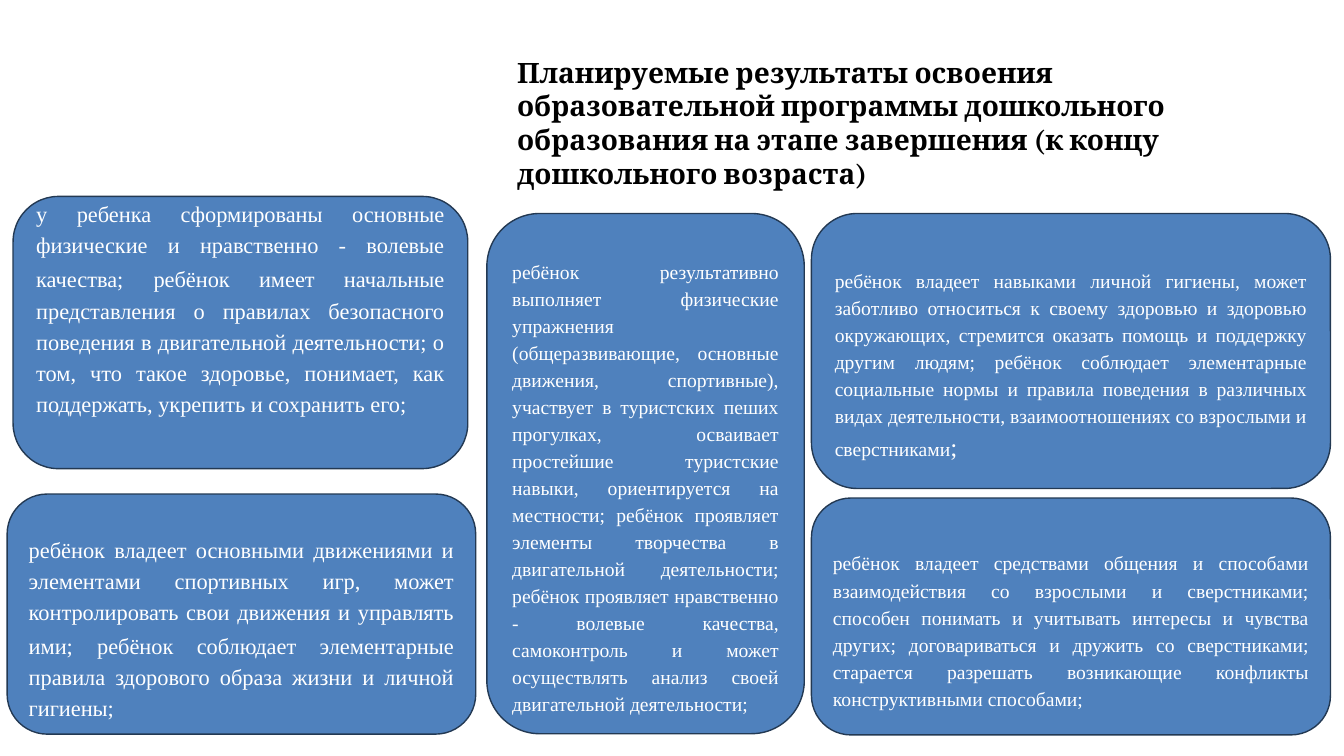
"""Slide with the planned results of a preschool education programme."""
from pptx import Presentation
from pptx.dml.color import RGBColor
from pptx.enum.shapes import MSO_SHAPE
from pptx.enum.text import MSO_ANCHOR, MSO_AUTO_SIZE, PP_ALIGN
from pptx.util import Cm, Pt

COLORS = {"card": "4F81BD", "border": "233953", "title": "000000", "text": "FFFFFF"}


def add_span(para, text, *, size, font="Times New Roman", color="text", bold=False):
    span = para.add_run()
    span.text = text
    span.font.name = font
    span.font.size = Pt(size)
    span.font.bold = bold
    span.font.color.rgb = RGBColor.from_string(COLORS[color])


deck = Presentation()
deck.slide_width, deck.slide_height = Cm(33.87), Cm(19.05)
page = deck.slides.add_slide(deck.slide_layouts[6])

title = page.shapes.add_textbox(Cm(12.78), Cm(1.27), Cm(18.77), Cm(3.68))
title.text_frame.word_wrap = True
title.text_frame.auto_size = MSO_AUTO_SIZE.SHAPE_TO_FIT_TEXT
add_span(
    title.text_frame.paragraphs[0],
    "Планируемые результаты освоения образовательной программы дошкольного "
    "образования на этапе завершения (к концу дошкольного возраста)",
    size=20, font="Cambria", color="title", bold=True,
)

MIDDLE_LEFT, RIGHT_LEFT, RIGHT_WIDTH, UPPER_TOP = 12.27, 20.45, 13.08, 5.38
INSET, LOWERED, RAISED = 0.13, 0.76, 1.44

cards = [
    ((0.33, 4.95, 11.46, 6.86), (INSET, RAISED), [
        ("у ребенка сформированы основные физические и нравственно - волевые качества;", 16),
        (" ", 18),
        ("ребёнок имеет начальные представления о правилах безопасного поведения в "
         "двигательной деятельности; о том, что такое здоровье, понимает, как поддержать, "
         "укрепить и сохранить его;", 16),
    ]),
    ((MIDDLE_LEFT, UPPER_TOP, 8, 13.11), (LOWERED, INSET), [
        ("ребёнок результативно выполняет физические упражнения (общеразвивающие, основные "
         "движения, спортивные), участвует в туристских пеших прогулках, осваивает простейшие "
         "туристские навыки, ориентируется на местности; ребёнок проявляет элементы творчества "
         "в двигательной деятельности; ребёнок проявляет нравственно - волевые качества, "
         "самоконтроль и может осуществлять анализ своей двигательной деятельности;", 14),
    ]),
    ((0.18, 12.45, 11.81, 6.05), (LOWERED, INSET), [
        ("ребёнок владеет основными движениями и элементами спортивных игр, может "
         "контролировать свои движения и управлять ими;", 16),
        (" ", 18),
        ("ребёнок соблюдает элементарные правила здорового образа жизни и личной гигиены;", 16),
    ]),
    ((RIGHT_LEFT, UPPER_TOP, RIGHT_WIDTH, 6.93), (LOWERED, INSET), [
        ("ребёнок владеет навыками личной гигиены, может заботливо относиться к своему здоровью "
         "и здоровью окружающих, стремится оказать помощь и поддержку другим людям; ребёнок "
         "соблюдает элементарные социальные нормы и правила поведения в различных видах "
         "деятельности, взаимоотношениях со взрослыми и сверстниками", 14),
        (";", 18),
    ]),
    ((RIGHT_LEFT, 12.55, RIGHT_WIDTH, 5.97), (LOWERED, INSET), [
        ("ребёнок владеет средствами общения и способами взаимодействия со взрослыми и "
         "сверстниками; способен понимать и учитывать интересы и чувства других; "
         "договариваться и дружить со сверстниками; старается разрешать возникающие "
         "конфликты конструктивными способами;", 14),
    ]),
]

for position, (inset_top, inset_bottom), spans in cards:
    card = page.shapes.add_shape(MSO_SHAPE.ROUNDED_RECTANGLE, *map(Cm, position))
    card.shadow.inherit = False
    card.fill.solid()
    card.fill.fore_color.rgb = RGBColor.from_string(COLORS["card"])
    card.line.color.rgb = RGBColor.from_string(COLORS["border"])
    card.line.width = Pt(1)
    frame = card.text_frame
    frame.word_wrap = True
    frame.vertical_anchor = MSO_ANCHOR.MIDDLE
    frame.margin_top, frame.margin_bottom = Cm(inset_top), Cm(inset_bottom)
    para = frame.paragraphs[0]
    para.alignment = PP_ALIGN.JUSTIFY
    para.line_spacing = 1.15
    for text, size in spans:
        add_span(para, text, size=size)

deck.save("out.pptx")
